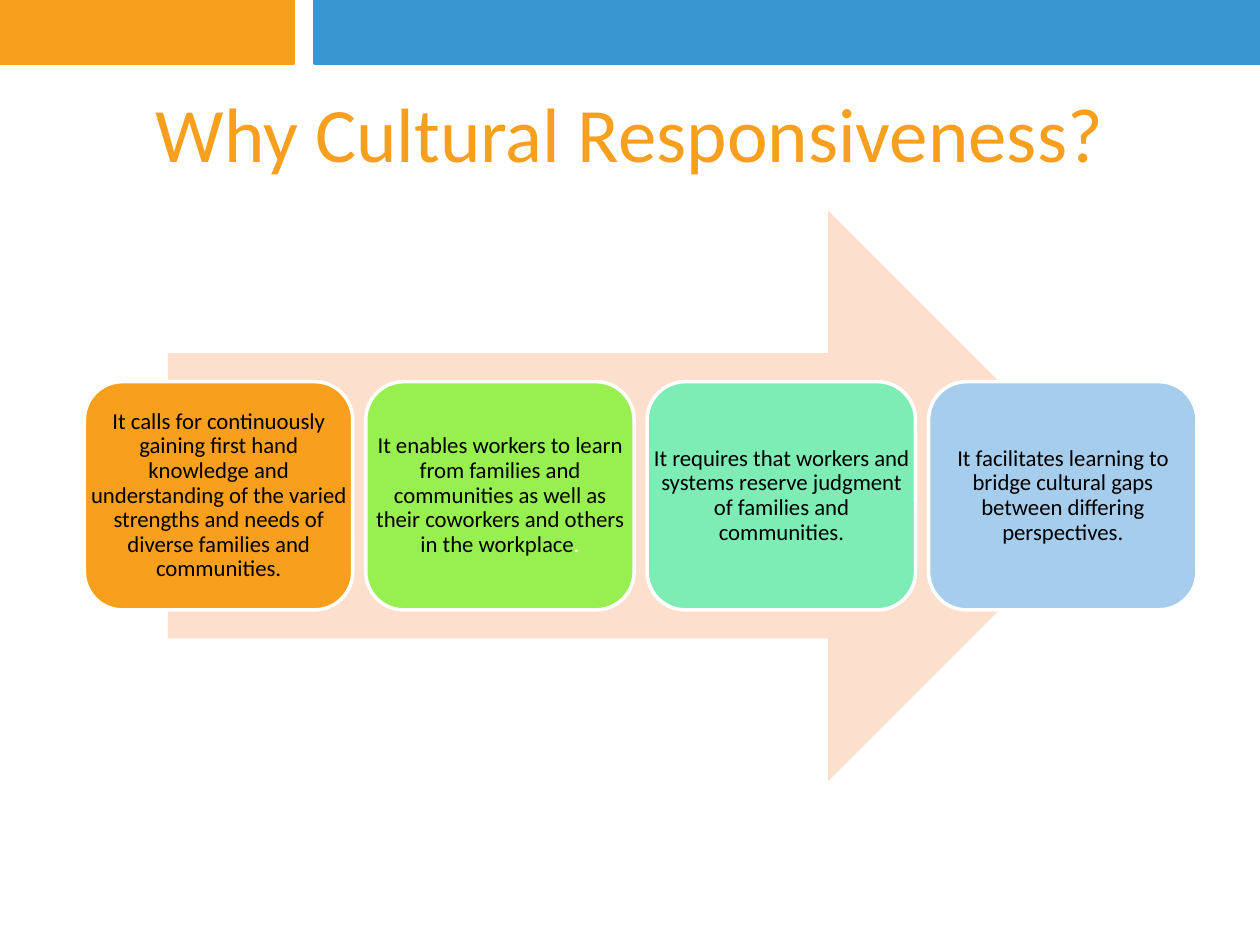
from pptx import Presentation
from pptx import util as u
from pptx.dml.color import RGBColor
from pptx.enum import shapes, text

ORANGE, BLUE, PEACH = "F89F1E", "3A96D0", "FCDFCD"
BLACK, WHITE = "000000", "FFFFFF"
REASONS = [
    (ORANGE, [("It calls for continuously gaining first hand knowledge and "
               "understanding of the varied strengths and needs of diverse "
               "families and communities.", BLACK)]),
    ("98F050", [("It enables workers to learn from families and communities as "
                 "well as their coworkers and others in the workplace", BLACK),
                (".", WHITE)]),
    ("7DEDB5", [("It requires that workers and systems reserve judgment of "
                 "families and communities.", BLACK)]),
    ("A7CDED", [("It facilitates learning to bridge cultural gaps between "
                 "differing perspectives.", BLACK)]),
]


def color(value):
    """Turn a hex string into a colour."""
    return RGBColor.from_string(value)


def add_block(slide, kind, box, fill, line=None):
    """Add a filled preset shape, outlined if a line colour is given."""
    block = slide.shapes.add_shape(kind, *map(u.Inches, box))
    block.shadow.inherit = False
    block.fill.solid()
    block.fill.fore_color.rgb = color(fill)
    if line:
        block.line.color.rgb = color(line)
        block.line.width = u.Pt(2)
    else:
        block.line.fill.background()


def add_text(slide, box, runs, size, inset=0.1, spacing=1.0):
    """Add a centred paragraph made of (wording, colour) runs."""
    frame = slide.shapes.add_textbox(*map(u.Inches, box)).text_frame
    frame.word_wrap = True
    frame.vertical_anchor = text.MSO_ANCHOR.MIDDLE
    frame.margin_left = frame.margin_right = u.Inches(inset)
    frame.margin_top = frame.margin_bottom = u.Inches(0.05)
    paragraph = frame.paragraphs[0]
    paragraph.alignment = text.PP_ALIGN.CENTER
    paragraph.line_spacing = spacing
    for wording, ink in runs:
        run = paragraph.add_run()
        run.text = wording
        run.font.name = "Calibri"
        run.font.size = u.Pt(size)
        run.font.color.rgb = color(ink)


def add_banner(slide, left, top, width, height):
    """Add the two-colour band, split at a quarter of its width."""
    split, gap = width / 4, 0.17
    kind = shapes.MSO_SHAPE.RECTANGLE
    add_block(slide, kind, (left, top, split - gap, height), ORANGE, ORANGE)
    add_block(slide, kind, (left + split, top, width - split, height), BLUE, BLUE)


def add_reasons(slide, left, top, width, height):
    """Add the arrow and the row of reason cards across its middle."""
    arrow_width = width * 0.85
    add_block(slide, shapes.MSO_SHAPE.RIGHT_ARROW,
              (left + (width - arrow_width) / 2, top, arrow_width, height), PEACH)
    card_width, card_height = 2.13, height * 0.4
    step = (width - card_width) / (len(REASONS) - 1)
    card_top = top + (height - card_height) / 2
    for index, (fill, runs) in enumerate(REASONS):
        card = (left + index * step, card_top, card_width, card_height)
        add_block(slide, shapes.MSO_SHAPE.ROUNDED_RECTANGLE, card, fill, WHITE)
        add_text(slide, card, runs, size=13, inset=0.05, spacing=0.9)


def main():
    """Build the slide and save it."""
    deck = Presentation()
    deck.slide_width, deck.slide_height = u.Inches(10), u.Inches(7.5)
    slide = deck.slides.add_slide(deck.slide_layouts[6])
    add_banner(slide, 0, 0, 10, 0.5)
    add_text(slide, (0.5, 0.42, 9, 1.25),
             [("Why Cultural Responsiveness?", ORANGE)], size=44)
    add_reasons(slide, 0.67, 1.67, 8.83, 4.53)
    deck.save("out.pptx")


if __name__ == "__main__":
    main()
